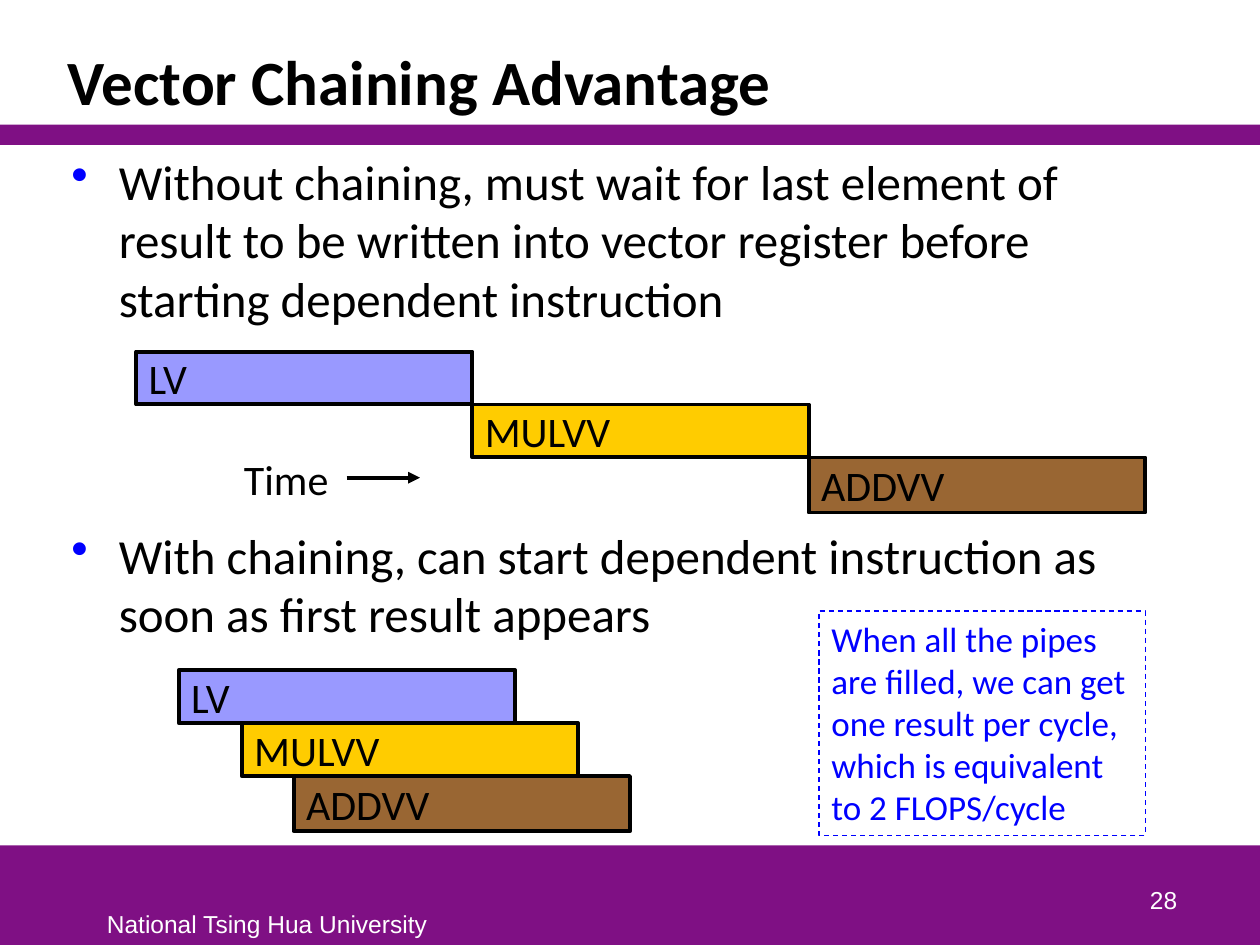
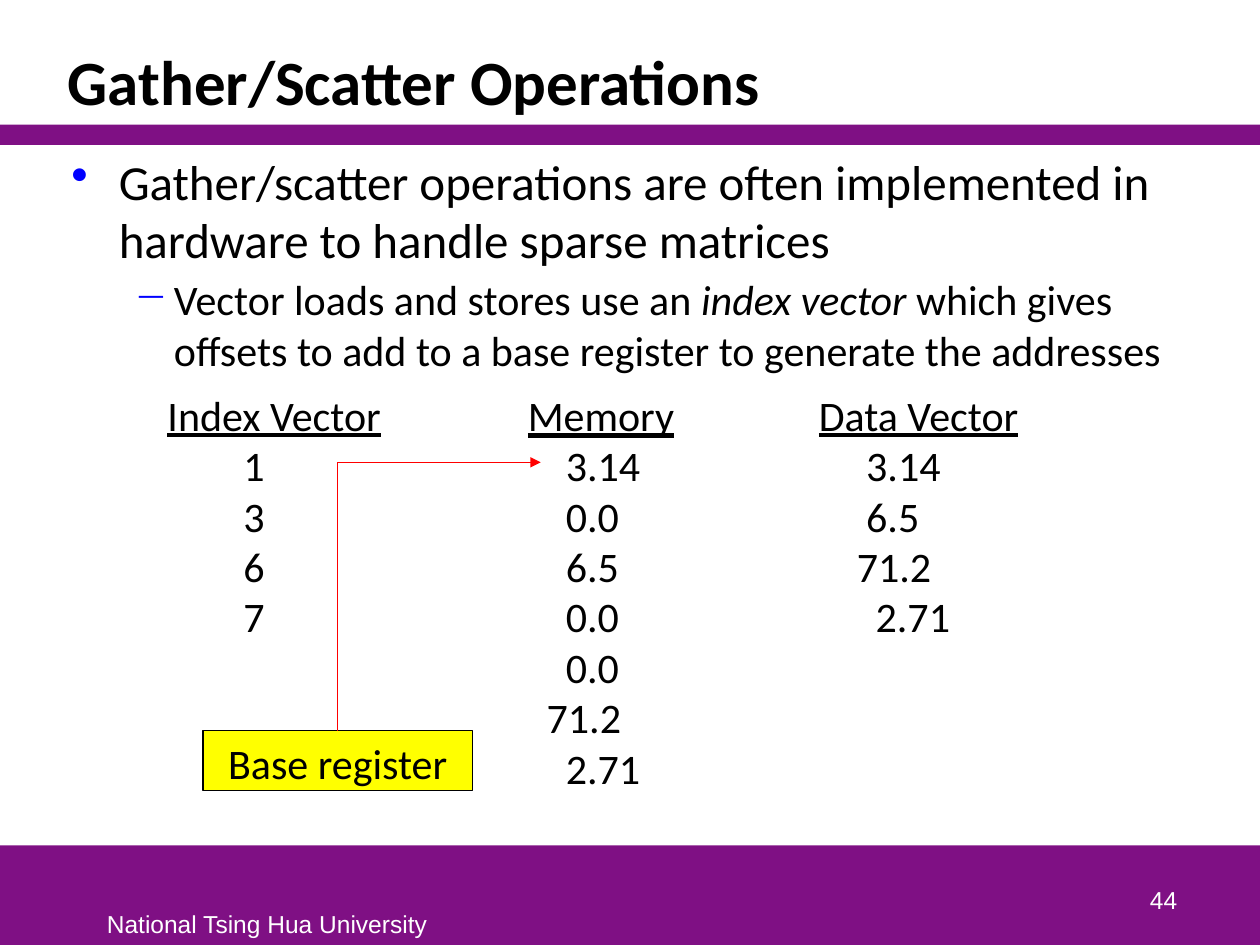
from dataclasses import dataclass

from lxml import etree
from pptx import Presentation
from pptx.dml.color import RGBColor
from pptx.enum.dml import MSO_LINE
from pptx.enum.shapes import MSO_CONNECTOR, MSO_SHAPE
from pptx.enum.text import MSO_ANCHOR, PP_ALIGN
from pptx.oxml.ns import qn
from pptx.util import Pt

RECTANGLE = MSO_SHAPE.RECTANGLE
STRAIGHT = MSO_CONNECTOR.STRAIGHT
DASH = MSO_LINE.DASH
TOP, MIDDLE, BOTTOM = MSO_ANCHOR.TOP, MSO_ANCHOR.MIDDLE, MSO_ANCHOR.BOTTOM
LEFT, CENTER, RIGHT = PP_ALIGN.LEFT, PP_ALIGN.CENTER, PP_ALIGN.RIGHT
BLANK_LAYOUT = 6
TOP_SIDE = 0


@dataclass(frozen=True)
class Theme:
    heading_font: str = "Calibri"
    footer_font: str = "Arial"
    black: str = "000000"
    white: str = "FFFFFF"
    purple: str = "7F1084"
    blue: str = "0000FF"
    red: str = "FF0000"
    yellow: str = "FFFF00"
    lavender: str = "9999FF"
    gold: str = "FFCC00"
    brown: str = "996633"
    title_size: int = 36
    body_size: int = 28
    label_size: int = 24
    note_size: int = 20
    footer_size: int = 14
    thick: float = 2.25
    thin: float = 0.75


@dataclass(frozen=True)
class Line:
    text: str
    size: int
    bullet: str = ""
    indent: float = 0
    hanging: float = 0
    before: float = 0
    spacing: float = 1
    bold: bool = False
    underline: bool = False
    color: str = Theme.black
    font: str = Theme.heading_font
    align: PP_ALIGN = LEFT
    italic: str = ""


class SlideBuilder:
    def __init__(self, deck, theme):
        self.deck = deck
        self.theme = theme
        self.slide = None

    def start(self, title, number):
        theme = self.theme
        layout = self.deck.slide_layouts[BLANK_LAYOUT]
        self.slide = self.deck.slides.add_slide(layout)
        for top, height in ((483.1, 56.9), (71.3, 11.5)):
            self.rectangle((0, top, 720, height), fill=theme.purple)
        footer = dict(size=theme.footer_size, color=theme.white,
                      font=theme.footer_font)
        self.text((54, 516.2, 199, 23.8),
                  [Line("National Tsing Hua University", **footer)])
        self.text((530, 490.3, 149.8, 36),
                  [Line(str(number), align=RIGHT, **footer)], BOTTOM)
        self.text((31.7, 18, 645.8, 53.3),
                  [Line(title, theme.title_size, bold=True, spacing=0.85)],
                  BOTTOM)

    def rectangle(self, place, fill=None, line=None, width=0, dash=None,
                  lines=(), anchor=MIDDLE):
        box = self.slide.shapes.add_shape(RECTANGLE, *map(Pt, place))
        box.shadow.inherit = False
        if fill:
            box.fill.solid()
            box.fill.fore_color.rgb = RGBColor.from_string(fill)
        else:
            box.fill.background()
        if line:
            box.line.color.rgb = RGBColor.from_string(line)
            box.line.width = Pt(width)
            if dash:
                box.line.dash_style = dash
        else:
            box.line.fill.background()
        if lines:
            self.fill_text(box, lines, anchor)
        return box

    def text(self, place, lines, anchor=TOP):
        box = self.slide.shapes.add_textbox(*map(Pt, place))
        self.fill_text(box, lines, anchor)

    def fill_text(self, box, lines, anchor):
        frame = box.text_frame
        frame.word_wrap = True
        frame.vertical_anchor = anchor
        for index, line in enumerate(lines):
            para = frame.add_paragraph() if index else frame.paragraphs[0]
            self.style_paragraph(para, line)
            if not line.italic:
                para.add_run().text = line.text
                continue
            before, after = line.text.split(line.italic)
            for part in (before, line.italic, after):
                span = para.add_run()
                span.text = part
                span.font.italic = part == line.italic

    def style_paragraph(self, para, line):
        props = para._p.get_or_add_pPr()
        props.set("marL", str(Pt(line.indent)))
        props.set("indent", str(Pt(-line.hanging)))
        if line.bullet:
            color = etree.SubElement(props, qn("a:buClr"))
            etree.SubElement(color, qn("a:srgbClr"), val=self.theme.blue)
            etree.SubElement(props, qn("a:buChar"), char=line.bullet)
        para.alignment = line.align
        para.line_spacing = line.spacing
        para.space_before = Pt(line.before)
        font = para.font
        font.name = line.font
        font.size = Pt(line.size)
        font.bold = line.bold
        font.underline = line.underline
        font.color.rgb = RGBColor.from_string(line.color)

    def point(self, text):
        return Line(text, self.theme.body_size, "•", 27, 27)

    def connector(self, start, end, color, width, arrow=False, source=None):
        line = self.slide.shapes.add_connector(STRAIGHT, *map(Pt, start + end))
        line.line.color.rgb = RGBColor.from_string(color)
        line.line.width = Pt(width)
        props = line.element.spPr
        if arrow:
            etree.SubElement(props.find(qn("a:ln")), qn("a:tailEnd"),
                             type="triangle")
        etree.SubElement(props, qn("a:effectLst"))
        if source:
            line.begin_connect(source, TOP_SIDE)

    def pipeline(self, top, lefts):
        theme = self.theme
        stages = (("LV", theme.lavender, 30.25), ("MULVV", theme.gold, 30.25),
                  ("ADDVV", theme.brown, 31.5))
        for left, (name, fill, height) in zip(lefts, stages):
            self.rectangle((left, top, 192.2, height), fill, theme.black,
                           theme.thick, lines=[Line(name, theme.label_size)])
            top += height

    def column(self, left, width, heading, values):
        size = self.theme.label_size
        lines = [Line(heading, size, underline=True)]
        lines += [Line(value, size, indent=indent) for value, indent in values]
        self.text((left, 218.9, width, 29.3 * len(lines) + 7.2), lines)


def build_chaining(page):
    theme = page.theme
    page.start("Vector Chaining Advantage", 28)
    page.text((33.8, 82.8, 643.7, 112), [page.point(
        "Without chaining, must wait for last element of result to be "
        "written into vector register before starting dependent instruction")])
    page.text((33.8, 296.5, 643.7, 76), [page.point(
        "With chaining, can start dependent instruction as soon as first "
        "result appears")])
    page.pipeline(200.9, [77.8 + 192.2 * step for step in range(3)])
    page.text((132.3, 255, 65, 36.7), [Line("Time", theme.label_size)], MIDDLE)
    page.connector((198, 273), (240, 273), theme.black, theme.thick, True)
    page.pipeline(383, (102.2, 138.2, 167.8))
    page.rectangle(
        (468, 349.2, 186.5, 128.2), line=theme.blue, width=theme.thin,
        dash=DASH, anchor=TOP,
        lines=[Line("When all the pipes are filled, we can get one result per "
                    "cycle, which is equivalent to 2 FLOPS/cycle",
                    theme.note_size, color=theme.blue)])


def build_gather(page):
    theme = page.theme
    page.start("Gather/Scatter Operations", 44)
    page.text((33.8, 82.8, 643.7, 136), [
        page.point("Gather/scatter operations are often implemented in "
                   "hardware to handle sparse matrices"),
        Line("Vector loads and stores use an index vector which gives offsets "
             "to add to a base register to generate the addresses",
             theme.label_size, "−", 58.5, 22.5, before=3,
             italic="index vector ")])
    page.column(88.6, 145, "Index Vector",
                [(value, 43.4) for value in "1367"])
    page.column(460.8, 160, "Data Vector",
                [("3.14", 27.1), ("6.5", 27.1), ("71.2", 21.7),
                 ("2.71", 32.5)])
    page.column(294.5, 110, "Memory",
                [(value, 10.8 if value == "71.2" else 21.7) for value in
                 ("3.14", "0.0", "6.5", "0.0", "0.0", "71.2", "2.71")])
    register = page.rectangle(
        (116, 417.6, 154, 34), theme.yellow, theme.black, theme.thin,
        lines=[Line("Base register", theme.label_size, align=CENTER)],
        anchor=TOP)
    corner = (193, 264.2)
    page.connector((193, 417.6), corner, theme.red, theme.thin,
                   source=register)
    page.connector(corner, (309, 264.2), theme.red, theme.thin, True)


def main():
    deck = Presentation()
    deck.slide_width, deck.slide_height = Pt(720), Pt(540)
    page = SlideBuilder(deck, Theme())
    build_chaining(page)
    build_gather(page)
    deck.save("out.pptx")


if __name__ == "__main__":
    main()
